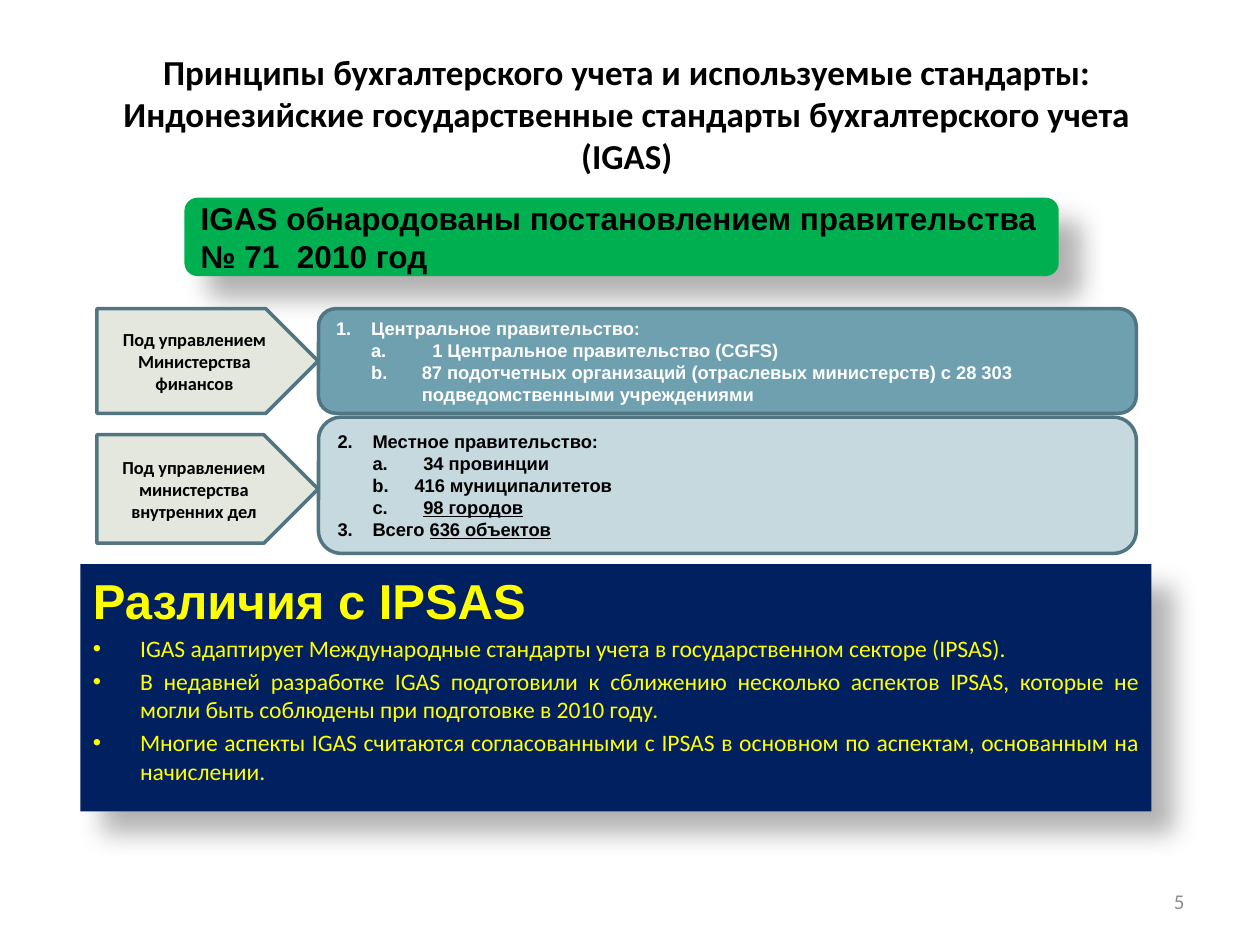
from pptx import Presentation
from pptx.dml.color import RGBColor
from pptx.enum.shapes import MSO_SHAPE as Shape
from pptx.enum.text import MSO_ANCHOR as Anchor, MSO_AUTO_SIZE as AutoSize, PP_ALIGN as Align
from pptx.oxml import parse_xml
from pptx.oxml.ns import nsdecls
from pptx.util import Pt

BLACK = RGBColor(0x00, 0x00, 0x00)
WHITE = RGBColor(0xFF, 0xFF, 0xFF)
GREY = RGBColor(0x8C, 0x8C, 0x8C)
GREEN = RGBColor(0x00, 0xB0, 0x50)
NAVY = RGBColor(0x00, 0x20, 0x60)
YELLOW = RGBColor(0xFF, 0xFF, 0x00)
TEAL = RGBColor(0x6E, 0xA0, 0xB0)
PALE_TEAL = RGBColor(0xC5, 0xD9, 0xDF)
SAGE = RGBColor(0xE3, 0xE7, 0xDE)
OUTLINE = RGBColor(0x51, 0x76, 0x82)

# Content
TITLE = ("Принципы бухгалтерского учета и используемые стандарты:\n"
         "Индонезийские государственные стандарты бухгалтерского учета (IGAS)")
DECREE = "IGAS обнародованы постановлением правительства № 71  2010 год"
PAGE_NUMBER = "5"
DIFFERENCES_HEADING = "Различия с IPSAS"
DIFFERENCES = [
    "IGAS адаптирует Международные стандарты учета в государственном секторе (IPSAS).",
    "В недавней разработке IGAS подготовили к сближению несколько аспектов IPSAS, "
    "которые не могли быть соблюдены при подготовке в 2010 году.",
    "Многие аспекты IGAS считаются согласованными с IPSAS в основном по аспектам, "
    "основанным на начислении.",
]
# Each item: level, left margin, plain text, underlined text
GOVERNMENTS = [
    {"top": 176.4, "height": 59.8, "fill": TEAL, "color": WHITE, "start": 1,
     "arrow_top": 176.4, "arrow_height": 59.8,
     "manager": ["Под управлением", "Министерства финансов"],
     "items": [
         (0, 20, "Центральное правительство:", ""),
         (1, 55, "1 Центральное правительство (CGFS)", ""),
         (1, 49, "87 подотчетных организаций (отраслевых министерств) с 28 303 "
                 "подведомственными учреждениями", ""),
     ]},
    {"top": 238.4, "height": 77.8, "fill": PALE_TEAL, "color": BLACK, "start": 2,
     "arrow_top": 248.4, "arrow_height": 62,
     "manager": ["Под управлением", "министерства", "внутренних дел"],
     "items": [
         (0, 20, "Местное правительство:", ""),
         (1, 49, "34 провинции", ""),
         (1, 44, "416 муниципалитетов", ""),
         (1, 49, "", "98 городов"),
         (0, 20, "Всего ", "636 объектов"),
     ]},
]
ARROW_LEFT, ARROW_WIDTH = 55.4, 126.4
LIST_LEFT, LIST_WIDTH = 182, 467.3
STEP = 20  # indent per list level


def add_panel(page, kind, place, fill, line=None):
    box = page.shapes.add_shape(kind, *map(Pt, place))
    box.shadow.inherit = False
    box.fill.solid()
    box.fill.fore_color.rgb = fill
    if line is None:
        box.line.fill.background()
    else:
        box.line.color.rgb = line
        box.line.width = Pt(2)
    box.text_frame.word_wrap = True
    box.text_frame.vertical_anchor = Anchor.MIDDLE
    return box


def add_soft_shadow(box):
    effects = box._element.spPr.find("{*}effectLst")
    effects.append(parse_xml(
        f'<a:outerShdw {nsdecls("a")} blurRad="{Pt(15)}" dist="{Pt(18)}" dir="2700000" '
        'algn="tl" rotWithShape="0"><a:srgbClr val="000000"><a:alpha val="30000"/>'
        '</a:srgbClr></a:outerShdw>'))


def style(para, size, font, color, bold=False, align=Align.LEFT):
    para.alignment = align
    for span in para.runs:
        span.font.size = Pt(size)
        span.font.name = font
        span.font.bold = bold
        span.font.color.rgb = color


def set_bullet(para, margin, hang, tag):
    properties = para._p.get_or_add_pPr()
    properties.set("marL", str(Pt(margin)))
    properties.set("indent", str(-Pt(hang)))
    properties.append(parse_xml(f'<a:buFont {nsdecls("a")} typeface="Arial"/>'))
    properties.append(parse_xml(f'<a:{tag} {nsdecls("a")}/>'))


def paragraphs(frame, count):
    return [frame.paragraphs[0]] + [frame.add_paragraph() for _ in range(count - 1)]


deck = Presentation()
deck.slide_width, deck.slide_height = Pt(720), Pt(540)
page = deck.slides.add_slide(deck.slide_layouts[5])

# Title
title = page.shapes.title
title.left, title.top, title.width, title.height = map(Pt, (57.6, 28, 601.2, 73.4))
title.text_frame.auto_size = AutoSize.NONE
title.text_frame.vertical_anchor = Anchor.MIDDLE
para = title.text_frame.paragraphs[0]
para.text = TITLE
style(para, 20, "Calibri", BLACK, True, Align.CENTER)

# Page number
number = page.shapes.add_textbox(*map(Pt, (516, 500.4, 168, 28.8)))
number.text_frame.word_wrap = True
number.text_frame.vertical_anchor = Anchor.MIDDLE
number.text_frame.text = PAGE_NUMBER
style(number.text_frame.paragraphs[0], 12, "Calibri", GREY, align=Align.RIGHT)

# Decree banner
banner = add_panel(page, Shape.ROUNDED_RECTANGLE, (105.4, 113, 499.6, 44.8), GREEN)
add_soft_shadow(banner)
banner.text_frame.text = DECREE
style(banner.text_frame.paragraphs[0], 18, "Arial", BLACK, True)

# Differences panel
panel = add_panel(page, Shape.RECTANGLE, (46, 322.4, 612, 141.2), NAVY)
add_soft_shadow(panel)
panel.text_frame.vertical_anchor = Anchor.TOP
heading, *points = paragraphs(panel.text_frame, 1 + len(DIFFERENCES))
heading.text = DIFFERENCES_HEADING
heading.space_before = Pt(5.6)
style(heading, 28, "Arial", YELLOW, True)
for para, text in zip(points, DIFFERENCES):
    para.text = text
    para.space_before = Pt(2.7)
    style(para, 13.5, "Calibri", YELLOW, align=Align.JUSTIFY)
    set_bullet(para, 27, 27, 'buChar char="•"')

# Government lists and the arrows leading to them
for group in GOVERNMENTS:
    box = add_panel(page, Shape.ROUNDED_RECTANGLE,
                    (LIST_LEFT, group["top"], LIST_WIDTH, group["height"]),
                    group["fill"], OUTLINE)
    items = group["items"]
    for para, (level, margin, plain, underlined) in zip(
            paragraphs(box.text_frame, len(items)), items):
        para.level = level
        for text, underline in ((plain, False), (underlined, True)):
            if text:
                span = para.add_run()
                span.text = text
                span.font.underline = underline
        style(para, 10.5, "Arial", group["color"], True)
        numbering = ('type="alphaLcPeriod"' if level
                     else f'type="arabicPeriod" startAt="{group["start"]}"')
        set_bullet(para, margin, margin - level * STEP, f"buAutoNum {numbering}")

    arrow = add_panel(page, Shape.PENTAGON,
                      (ARROW_LEFT, group["arrow_top"], ARROW_WIDTH, group["arrow_height"]),
                      SAGE, OUTLINE)
    lines = group["manager"]
    for para, text in zip(paragraphs(arrow.text_frame, len(lines)), lines):
        para.text = text
        style(para, 10.5, "Calibri", BLACK, True, Align.CENTER)

deck.save("out.pptx")
